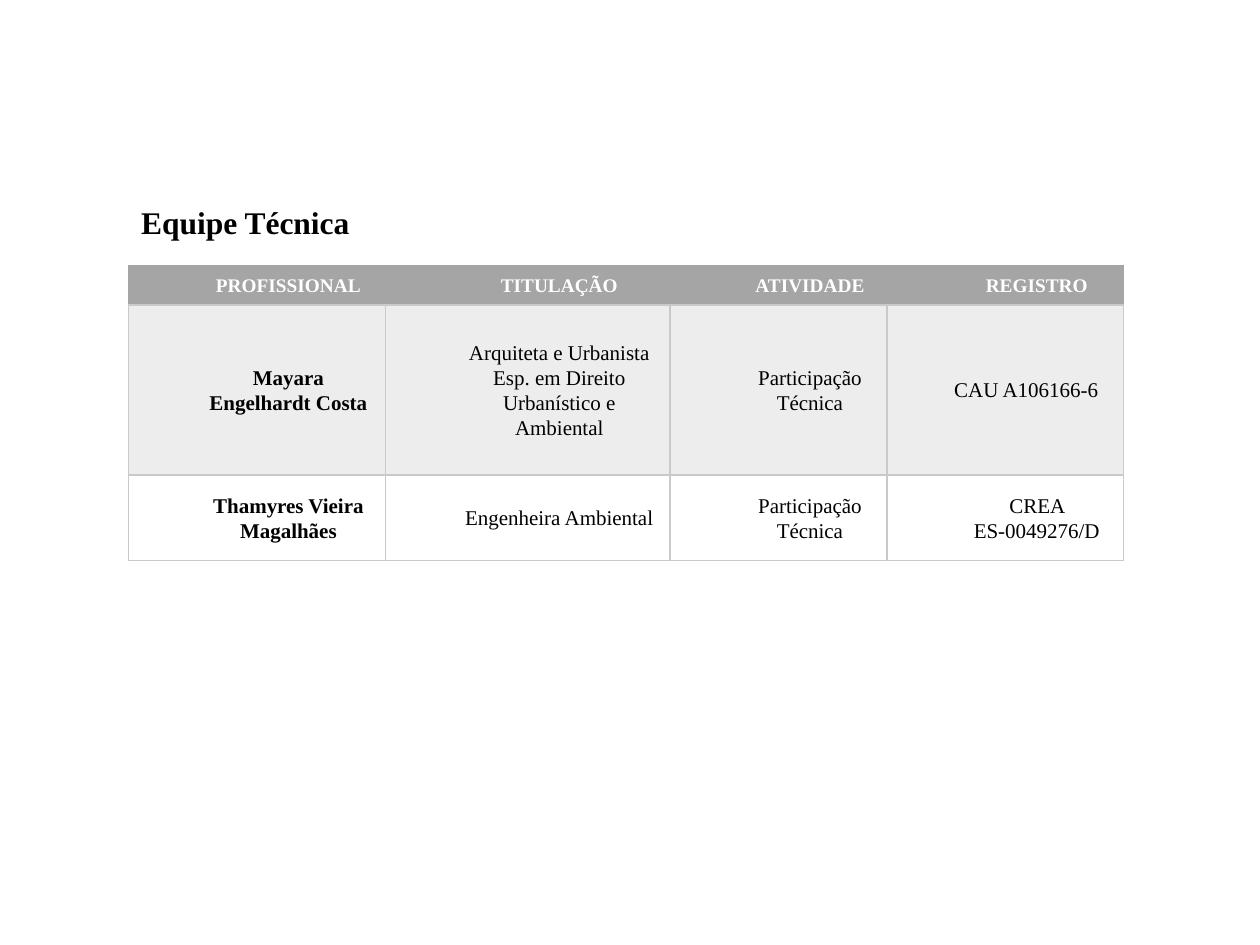
"""Build the technical team slide: a title and a table of professionals."""
from dataclasses import dataclass

from lxml.etree import SubElement
from pptx import Presentation
from pptx.dml.color import RGBColor as RGB
from pptx.enum.text import MSO_ANCHOR as ANCHOR, MSO_AUTO_SIZE as AUTO, PP_ALIGN as ALIGN
from pptx.oxml.ns import qn
from pptx.slide import Slide
from pptx.table import _Cell as Cell
from pptx.text.text import _Paragraph as Paragraph
from pptx.util import Pt


@dataclass(frozen=True)
class Theme:
    font: str = "Times New Roman"
    ink: str = "000000"
    white: str = "FFFFFF"
    header: str = "A5A5A5"
    band: str = "EDEDED"
    rule: str = "C9C9C9"
    title_size: float = 18
    header_size: float = 11
    body_size: float = 12
    indent: float = 36


@dataclass(frozen=True)
class RowStyle:
    height: float
    size: float
    color: str
    border: str
    fill: str | None
    all_bold: bool = False


@dataclass(frozen=True)
class TeamRow:
    style: RowStyle
    texts: tuple[str, ...]
    last_indent: float = 36


THEME = Theme()
LEFT, TABLE_TOP = 73.4, 151.9
COL_WIDTHS = (146.9, 162.7, 123.8, 135.4)
HEADER = RowStyle(22.3, THEME.header_size, THEME.white, THEME.header, THEME.header, True)
BANDED = RowStyle(97.2, THEME.body_size, THEME.ink, THEME.rule, THEME.band)
PLAIN = RowStyle(49, THEME.body_size, THEME.ink, THEME.rule, None)
ROWS = (
    TeamRow(HEADER, ("PROFISSIONAL", "TITULAÇÃO", "ATIVIDADE", "REGISTRO")),
    TeamRow(BANDED, ("Mayara Engelhardt Costa",
                     "Arquiteta e Urbanista\nEsp. em Direito Urbanístico e Ambiental",
                     "Participação Técnica", "CAU A106166-6"), 24),
    TeamRow(PLAIN, ("Thamyres Vieira Magalhães", "Engenheira Ambiental",
                    "Participação Técnica", "CREA ES-0049276/D")),
)


def style_runs(p: Paragraph, size: float, color: str, bold: bool) -> None:
    """Format every run of a paragraph."""
    for r in p.runs:
        r.font.name = THEME.font
        r.font.size = Pt(size)
        r.font.bold = bold
        r.font.color.rgb = RGB.from_string(color)


def add_title(s: Slide, text: str) -> None:
    """Place and format the title placeholder."""
    sp = s.shapes.title
    sp.left, sp.top, sp.width, sp.height = Pt(LEFT), Pt(112.3), Pt(157.7), Pt(28.8)
    tf = sp.text_frame
    tf.text = text
    tf.word_wrap = True
    tf.auto_size = AUTO.NONE
    tf.vertical_anchor = ANCHOR.TOP
    p = tf.paragraphs[0]
    p.alignment = ALIGN.LEFT
    style_runs(p, THEME.title_size, THEME.ink, True)


def set_borders(cell: Cell, color: str) -> None:
    """Draw a one-point line on each side of a cell."""
    tc_pr = cell._tc.get_or_add_tcPr()
    for side in ("a:lnL", "a:lnR", "a:lnT", "a:lnB"):
        ln = SubElement(tc_pr, qn(side), w=str(Pt(1)))
        SubElement(SubElement(ln, qn("a:solidFill")), qn("a:srgbClr"), val=color)


def fill_cell(cell: Cell, text: str, style: RowStyle, bold: bool, indent: float) -> None:
    """Write and format one table cell."""
    set_borders(cell, style.border)
    if style.fill:
        cell.fill.solid()
        cell.fill.fore_color.rgb = RGB.from_string(style.fill)
    else:
        cell.fill.background()
    cell.margin_left = cell.margin_right = Pt(5)
    cell.margin_top = cell.margin_bottom = Pt(0)
    cell.vertical_anchor = ANCHOR.MIDDLE
    cell.text_frame.text = text
    for p in cell.text_frame.paragraphs:
        p.alignment = ALIGN.CENTER
        p.line_spacing = 1.07
        p._p.get_or_add_pPr().set("marL", str(Pt(indent)))
        style_runs(p, style.size, style.color, bold)


def add_team_table(s: Slide, rows: tuple[TeamRow, ...]) -> None:
    """Add the table of professionals."""
    height = sum(row.style.height for row in rows)
    table = s.shapes.add_table(len(rows), len(COL_WIDTHS), Pt(LEFT), Pt(TABLE_TOP),
                               Pt(sum(COL_WIDTHS)), Pt(height)).table
    table.horz_banding = False
    for column, width in zip(table.columns, COL_WIDTHS):
        column.width = Pt(width)
    last = len(COL_WIDTHS) - 1
    for i, row in enumerate(rows):
        table.rows[i].height = Pt(row.style.height)
        for j, text in enumerate(row.texts):
            indent = row.last_indent if j == last else THEME.indent
            fill_cell(table.cell(i, j), text, row.style, row.style.all_bold or j == 0, indent)


def main() -> None:
    """Build and save the presentation."""
    prs = Presentation()
    prs.slide_width, prs.slide_height = Pt(720), Pt(540)
    s = prs.slides.add_slide(prs.slide_layouts[5])
    add_title(s, "Equipe Técnica")
    add_team_table(s, ROWS)
    prs.save("out.pptx")


if __name__ == "__main__":
    main()
